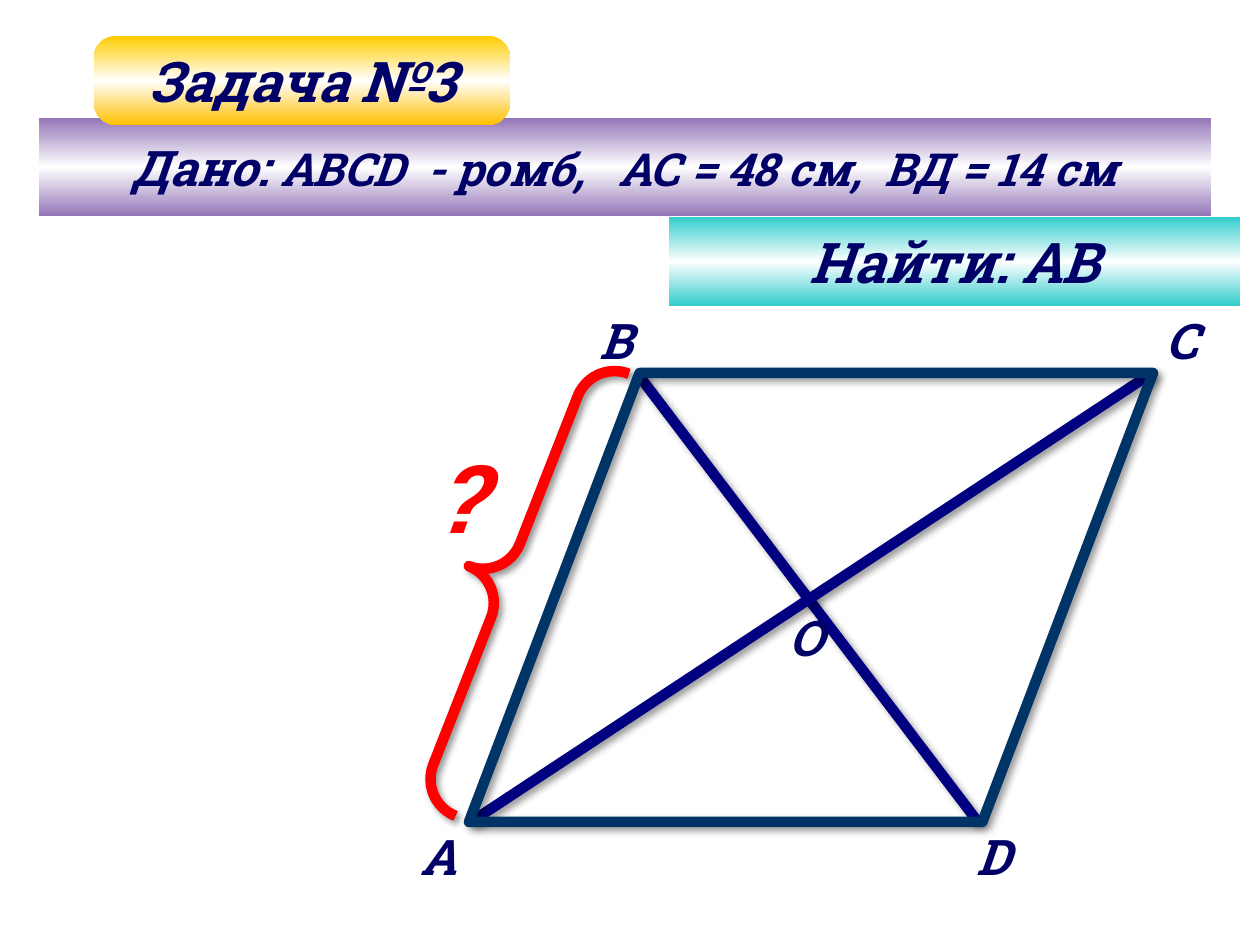
import copy
from dataclasses import dataclass

import lxml.etree
import pptx
import pptx.dml.color
import pptx.enum.shapes
import pptx.enum.text
import pptx.oxml.ns
import pptx.util

SHAPES = pptx.enum.shapes.MSO_SHAPE
PX = 914400 / 126


def px(length):
    return pptx.util.Emu(round(length * PX))


def rgb(value):
    return pptx.dml.color.RGBColor.from_string(value)


@dataclass(frozen=True)
class Theme:
    font: str = "Roboto Slab"
    ink: str = "000066"
    accent: str = "FF0000"
    diagonal: str = "000080"
    outline: str = "003366"
    white: str = "FFFFFF"
    gold: tuple = ("FFCC00", "FFC000")
    purple: tuple = ("9476B8", "9476B8")
    teal: tuple = ("33CCCC", "33CCCC")
    heading: int = 32
    label: int = 28
    given: int = 26
    question: int = 54
    stroke: int = 6


class Board:
    """Draws the elements of the problem on one slide in the theme's style."""

    def __init__(self, slide, theme):
        self.slide = slide
        self.theme = theme

    def add_runs(self, paragraph, runs, color=None):
        for text, size in runs:
            run = paragraph.add_run()
            run.text = text
            run.font.name = self.theme.font
            run.font.size = pptx.util.Pt(size)
            run.font.bold = run.font.italic = True
            run.font.color.rgb = rgb(color or self.theme.ink)

    def label(self, box, text, size, color=None, wrap=True):
        frame = self.slide.shapes.add_textbox(*map(px, box)).text_frame
        frame.word_wrap = wrap
        frame.auto_size = pptx.enum.text.MSO_AUTO_SIZE.SHAPE_TO_FIT_TEXT
        self.add_runs(frame.paragraphs[0], [(text, size)], color)

    def stroke(self, item, color):
        """Gives a line or outline its colour, width and soft shadow."""
        item.line.color.rgb = rgb(color)
        item.line.width = pptx.util.Pt(self.theme.stroke)
        qn = pptx.oxml.ns.qn
        properties = item._element.spPr
        for old in properties.findall(qn("a:effectLst")):
            properties.remove(old)
        effects = lxml.etree.SubElement(properties, qn("a:effectLst"))
        shadow = lxml.etree.SubElement(
            effects, qn("a:outerShdw"), blurRad=str(pptx.util.Pt(4)),
            dist=str(pptx.util.Pt(3)), dir="2700000", algn="tl", rotWithShape="0")
        black = lxml.etree.SubElement(shadow, qn("a:srgbClr"), val="000000")
        lxml.etree.SubElement(black, qn("a:alpha"), val="40000")

    def segment(self, start, end, color):
        line = self.slide.shapes.add_connector(
            pptx.enum.shapes.MSO_CONNECTOR.STRAIGHT, *map(px, start + end))
        self.stroke(line, color)

    def outline(self, kind, box, adjustments, color, rotation=0):
        shape = self.slide.shapes.add_shape(kind, *map(px, box))
        for index, value in enumerate(adjustments):
            shape.adjustments[index] = value
        shape.rotation = rotation
        shape.fill.background()
        self.stroke(shape, color)

    def banner(self, kind, box, edges, runs, corner=None):
        """Draws a centred caption on a vertical gradient with a white middle."""
        shape = self.slide.shapes.add_shape(kind, *map(px, box))
        shape.shadow.inherit = False
        shape.line.fill.background()
        if corner is not None:
            shape.adjustments[0] = corner
        shape.fill.gradient()
        shape.fill.gradient_angle = 270
        stops = shape._element.spPr.find(".//" + pptx.oxml.ns.qn("a:gsLst"))
        stops.insert(1, copy.deepcopy(stops[0]))
        colors = (edges[0], self.theme.white, edges[1])
        for stop, color, position in zip(shape.fill.gradient_stops, colors, (0, 0.5, 1)):
            stop.color.rgb = rgb(color)
            stop.position = position
        frame = shape.text_frame
        frame.word_wrap = False
        frame.vertical_anchor = pptx.enum.text.MSO_ANCHOR.MIDDLE
        caption = frame.paragraphs[0]
        caption.alignment = pptx.enum.text.PP_ALIGN.CENTER
        self.add_runs(caption, runs)


def main():
    deck = pptx.Presentation()
    deck.slide_width, deck.slide_height = px(1260), px(945)
    theme = Theme()
    board = Board(deck.slides.add_slide(deck.slide_layouts[6]), theme)

    vertex_a, vertex_b = (471, 822), (637, 373)
    vertex_c, vertex_d = (1152, 373), (978, 822)
    board.segment(vertex_b, vertex_d, theme.diagonal)
    board.segment(vertex_c, vertex_a, theme.diagonal)

    vertex_labels = (("А", 408, 820), ("B", 587, 304), ("C", 1153, 304),
                     ("D", 964, 820), ("О", 776, 601))
    for letter, left, top in vertex_labels:
        board.label((left, top, 58, 72), letter, theme.label)

    board.outline(SHAPES.RIGHT_BRACE, (466, 343, 79, 475), (0.5, 0.5),
                  theme.accent, rotation=201.4)
    board.label((423, 433, 84, 127), "?", theme.question, theme.accent, wrap=False)
    board.outline(SHAPES.PARALLELOGRAM, (469, 373, 684, 449), (0.38,), theme.outline)

    board.banner(SHAPES.RECTANGLE, (669, 217, 571, 89), theme.teal,
                 [("Найти: АВ", theme.heading)])
    board.banner(SHAPES.RECTANGLE, (39, 118, 1172, 98), theme.purple,
                 [("Дано: ", theme.label),
                  ("АВСD  - ромб,   АС = 48 см,  ВД = 14 см", theme.given)])
    board.banner(SHAPES.ROUNDED_RECTANGLE, (94, 36, 416, 89), theme.gold,
                 [("Задача №3", theme.heading)], corner=0.25)

    deck.save("out.pptx")


if __name__ == "__main__":
    main()
